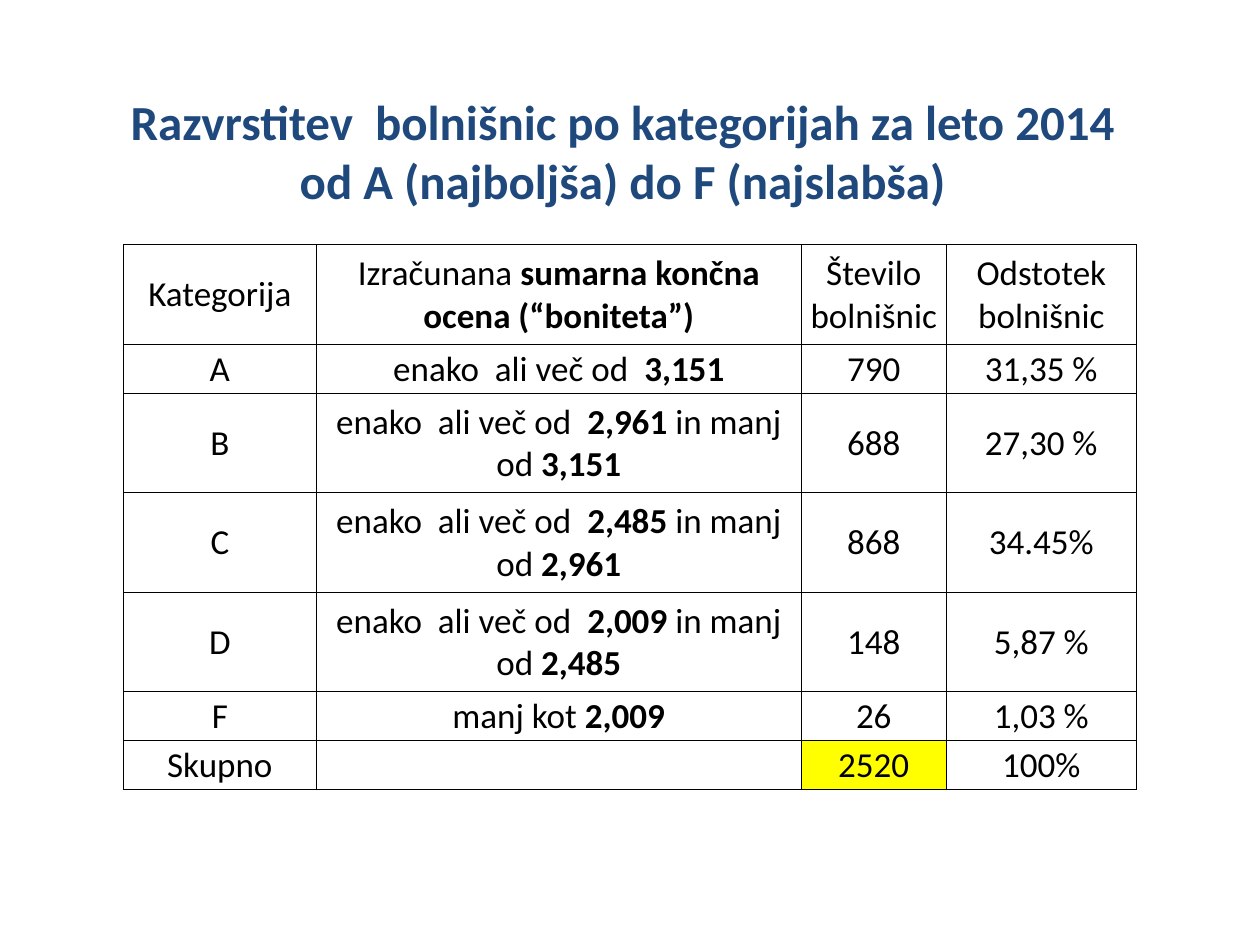
from lxml import etree
from pptx import Presentation
from pptx.dml.color import RGBColor
from pptx.enum.text import MSO_ANCHOR, PP_ALIGN
from pptx.oxml.ns import qn
from pptx.util import Inches, Pt

CENTER, MIDDLE, TOP = PP_ALIGN.CENTER, MSO_ANCHOR.MIDDLE, MSO_ANCHOR.TOP
NAVY = RGBColor(0x1F, 0x49, 0x7D)
BLACK = RGBColor(0, 0, 0)
YELLOW = RGBColor(0xFF, 0xFF, 0)
FONT = "Calibri"

# Content: text between asterisks is bold
TITLE = ["*Razvrstitev  bolnišnic po kategorijah za leto 2014*",
         "*od A (najboljša) do F (najslabša)*"]
BETWEEN = "enako  ali več od  *{}* in manj od *{}*"
ROWS = [
    ("Kategorija", "Izračunana *sumarna končna ocena (“boniteta”)*",
     "Število bolnišnic", "Odstotek bolnišnic"),
    ("A", "enako  ali več od  *3,151*", "790", "31,35 %"),
    ("B", BETWEEN.format("2,961", "3,151"), "688", "27,30 %"),
    ("C", BETWEEN.format("2,485", "2,961"), "868", "34.45%"),
    ("D", BETWEEN.format("2,009", "2,485"), "148", "5,87 %"),
    ("F", "manj kot *2,009*", "26", "1,03 %"),
    ("Skupno", "", "2520", "100%"),
]
HIGHLIGHT = "2520"

# Layout in inches
COL_WIDTHS = [1.53, 3.85, 1.15, 1.51]
LINE_HEIGHT = 0.39
ROW_HEIGHTS = [0.79, LINE_HEIGHT, 0.79, 0.79, 0.79, LINE_HEIGHT, LINE_HEIGHT]


def write(p, text, size, color):
    p.alignment = CENTER
    for i, part in enumerate(text.split("*")):
        if part:
            r = p.add_run()
            r.text = part
            r.font.name, r.font.size, r.font.bold = FONT, Pt(size), i % 2 == 1
            r.font.color.rgb = color


def add_borders(cell):
    tcPr = cell._tc.get_or_add_tcPr()
    for i, side in enumerate(("a:lnL", "a:lnR", "a:lnT", "a:lnB")):
        ln = etree.Element(qn(side), w=str(Pt(0.5)))
        fill = etree.SubElement(ln, qn("a:solidFill"))
        etree.SubElement(fill, qn("a:srgbClr"), val=str(BLACK))
        tcPr.insert(i, ln)


prs = Presentation()
prs.slide_width, prs.slide_height = Inches(10), Inches(7.5)
s = prs.slides.add_slide(prs.slide_layouts[6])

# Table
table = s.shapes.add_table(
    len(ROWS), len(COL_WIDTHS), Inches(0.98), Inches(1.94),
    Inches(sum(COL_WIDTHS)), Inches(sum(ROW_HEIGHTS))).table
table.first_row = table.horz_banding = False
for col, width in zip(table.columns, COL_WIDTHS):
    col.width = Inches(width)
for row, height, texts in zip(table.rows, ROW_HEIGHTS, ROWS):
    row.height = Inches(height)
    for cell, text in zip(row.cells, texts):
        cell.margin_left = cell.margin_right = cell.margin_top = Inches(0.01)
        cell.margin_bottom = 0
        cell.vertical_anchor = MIDDLE
        if text == HIGHLIGHT:
            cell.fill.solid()
            cell.fill.fore_color.rgb = YELLOW
        else:
            cell.fill.background()
        add_borders(cell)
        write(cell.text_frame.paragraphs[0], text, 20, BLACK)

# Title
tf = s.shapes.add_textbox(Inches(0.83), Inches(0.68),
                          Inches(8.22), Inches(0.54)).text_frame
tf.word_wrap = True
tf.vertical_anchor = TOP
for i, line in enumerate(TITLE):
    write(tf.add_paragraph() if i else tf.paragraphs[0], line, 28, NAVY)

prs.save("out.pptx")
